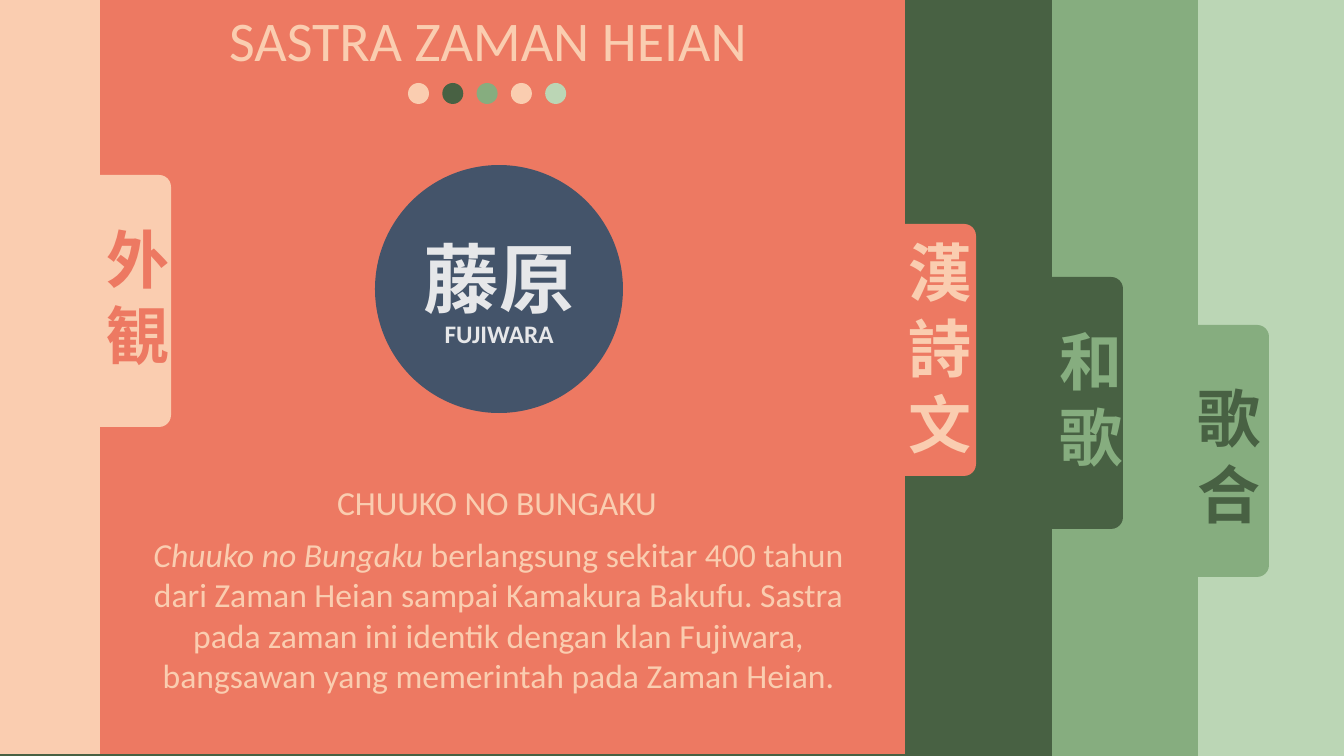
import dataclasses
import pptx
import pptx.dml.color
import pptx.enum.shapes
import pptx.enum.text
import pptx.oxml.ns
import pptx.util
from lxml import etree

SHAPE = pptx.enum.shapes.MSO_SHAPE
EMU_PER_PX = 12192000 / 1344


@dataclasses.dataclass(frozen=True)
class Theme:
    """Colours, fonts and type sizes of the slide."""
    peach: str = "FACDB0"
    coral: str = "ED7962"
    dark: str = "486143"
    green: str = "86AD7F"
    mint: str = "BBD6B5"
    navy: str = "44546A"
    pale: str = "E6E7E9"
    latin: str = "Calibri"
    kanji: str = "Noto Sans CJK JP"
    title: int = 40
    body: int = 24
    tab: int = 45
    name: int = 54
    label: int = 18


class Deck:
    """Draws styled elements on the current slide."""

    def __init__(self, theme):
        self.t = theme
        self.prs = pptx.Presentation()
        self.prs.slide_width, self.prs.slide_height = self.px(1344, 756)
        self.s = self.prs.slides.add_slide(self.prs.slide_layouts[1])
        self.fill(self.s.background, theme.mint)

    def px(self, *values):
        return [pptx.util.Emu(round(v * EMU_PER_PX)) for v in values]

    def fill(self, target, color):
        target.fill.solid()
        target.fill.fore_color.rgb = pptx.dml.color.RGBColor.from_string(color)

    def shape(self, kind, box, color, rotation=0):
        sp = self.s.shapes.add_shape(kind, *self.px(*box))
        sp.shadow.inherit = False
        sp.rotation = rotation
        sp.line.fill.background()
        self.fill(sp, color)

    def set_text(self, sp, runs, size, color, bold=False, kanji=False):
        tf = sp.text_frame
        inset_x, inset_y = self.px(10, 10 if kanji else 5)
        frame = {"word_wrap": True, "auto_size": pptx.enum.text.MSO_AUTO_SIZE.NONE,
                 "vertical_anchor": pptx.enum.text.MSO_ANCHOR.TOP,
                 "margin_left": inset_x, "margin_right": inset_x,
                 "margin_top": inset_y, "margin_bottom": inset_y}
        for key, value in frame.items():
            setattr(tf, key, value)
        p = tf.paragraphs[0]
        spacing = pptx.util.Pt(round(size * 1.2)) if kanji else 1.0
        layout = {"alignment": pptx.enum.text.PP_ALIGN.CENTER,
                  "space_before": pptx.util.Pt(0), "line_spacing": spacing}
        for key, value in layout.items():
            setattr(p, key, value)
        for text, italic in runs:
            r = p.add_run()
            r.text = text
            font = {"name": self.t.kanji if kanji else self.t.latin,
                    "size": pptx.util.Pt(size), "bold": bold, "italic": italic}
            for key, value in font.items():
                setattr(r.font, key, value)
            r.font.color.rgb = pptx.dml.color.RGBColor.from_string(color)
            if kanji:
                ea = etree.SubElement(r.font._element, pptx.oxml.ns.qn("a:ea"))
                ea.set("typeface", self.t.kanji)

    def text(self, box, text, size, color, **style):
        sp = self.s.shapes.add_textbox(*self.px(*box))
        self.set_text(sp, [(text, False)], size, color, **style)

    def placeholder(self, idx, box, runs, size, color):
        sp = self.s.placeholders[idx]
        sp.left, sp.top, sp.width, sp.height = self.px(*box)
        self.s.shapes.element.append(sp.element)
        self.set_text(sp, runs, size, color)
        pPr = sp.text_frame.paragraphs[0]._p.get_or_add_pPr()
        pPr.set("marL", "0")
        pPr.set("indent", "0")
        etree.SubElement(pPr, pptx.oxml.ns.qn("a:buNone"))

    def panel(self, edge, top, color, tab_top, caption, caption_at, caption_color):
        width, length, depth = 1086, 252, 71
        self.shape(SHAPE.RECTANGLE, (edge - width, top, width, 756), color)
        left = edge + (depth - length) / 2
        self.shape(SHAPE.ROUND_2_SAME_RECTANGLE,
                   (left, tab_top + (length - depth) / 2, length, depth), color, 90)
        height = 10 + 76 * len(caption)
        self.text((*caption_at, 75, height), caption, self.t.tab, caption_color,
                  bold=True, kanji=True)

    def dots(self, left, top, size, pitch, colors):
        for i, color in enumerate(colors):
            self.shape(SHAPE.OVAL, (left + i * pitch, top, size, size), color)


def main():
    t = Theme()
    d = Deck(t)
    for panel in (
        (1198, 0, t.green, 325, "歌合", (1188, 370), t.dark),
        (1052, 0, t.dark, 277, "和歌", (1050, 313), t.green),
        (905, -2, t.coral, 224, "漢詩文", (899, 224), t.peach),
        (100, -2, t.peach, 175, "外観", (97, 211), t.coral),
    ):
        d.panel(*panel)
    d.placeholder(0, (87, 1, 802, 78), [("SASTRA ZAMAN HEIAN", False)], t.title, t.peach)
    d.dots(408, 83, 21, 34.3, (t.peach, t.dark, t.green, t.peach, t.mint))
    d.text((305, 477, 384, 50), "CHUUKO NO BUNGAKU", t.body, t.peach)
    d.placeholder(1, (124, 529, 749, 173), [
        ("Chuuko no Bungaku ", True),
        ("berlangsung sekitar 400 tahun dari Zaman Heian sampai Kamakura Bakufu. "
         "Sastra pada zaman ini identik dengan klan Fujiwara, bangsawan yang "
         "memerintah pada Zaman Heian.", False),
    ], t.body, t.peach)
    d.shape(SHAPE.OVAL, (375, 165, 248, 248), t.navy)
    d.text((386, 222, 226, 102), "藤原", t.name, t.pale, bold=True, kanji=True)
    d.text((386, 313, 226, 40), "FUJIWARA", t.label, t.pale, bold=True)
    d.prs.save("out.pptx")


if __name__ == "__main__":
    main()
